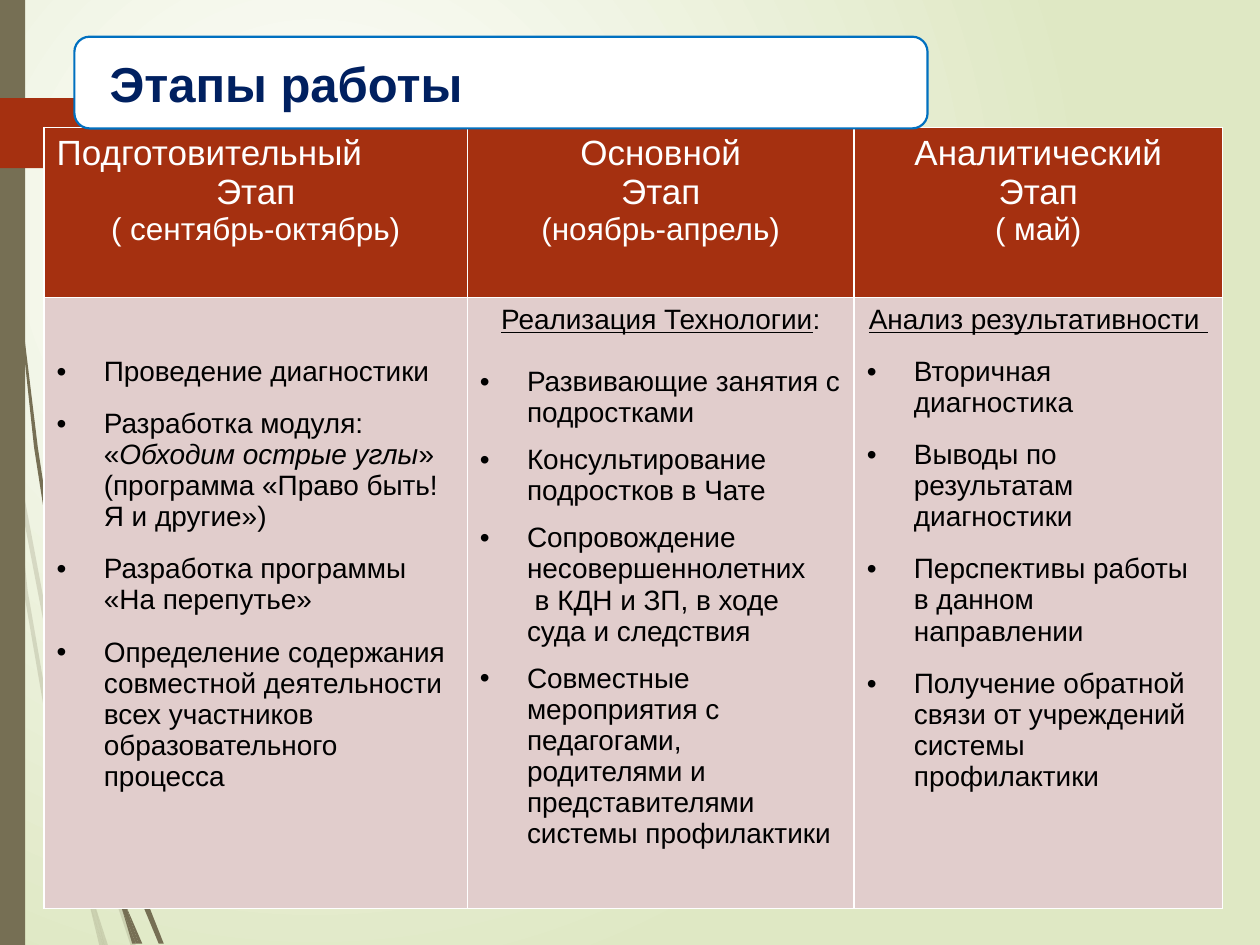
from lxml import etree
from pptx import Presentation
from pptx.dml.color import RGBColor
from pptx.enum.shapes import MSO_SHAPE
from pptx.enum.text import MSO_ANCHOR, MSO_AUTO_SIZE, PP_ALIGN
from pptx.oxml.ns import qn
from pptx.util import Cm, Pt

LEFT, CENTER = PP_ALIGN.LEFT, PP_ALIGN.CENTER
FONT = "Arial"
WHITE, BLACK, RUST, OLIVE, ROSE = "FFFFFF", "000000", "A53010", "766F54", "E1CDCC"

TITLE = "Этапы работы"
STAGES = [
    {"head": ["Подготовительный", "Этап", "( сентябрь-октябрь)"], "first_align": LEFT,
     "goal": [], "top": 1.18, "first_gap": 0, "gap": 12,
     "tasks": [
         ["Проведение диагностики"],
         ["Разработка модуля: «", ("Обходим острые углы", {"italic": True}),
          "» (программа «Право быть! Я и другие»)"],
         ["Разработка программы «На перепутье»"],
         ["Определение содержания совместной деятельности всех участников "
          "образовательного процесса"]]},
    {"head": ["Основной", "Этап", "(ноябрь-апрель)"], "first_align": CENTER,
     "goal": [("Реализация Технологии", {"underline": True}), ":"],
     "top": 0.13, "first_gap": 18, "gap": 9,
     "tasks": [
         ["Развивающие занятия с подростками"],
         ["Консультирование подростков в Чате"],
         ["Сопровождение несовершеннолетних\n в КДН и ЗП, в ходе суда и следствия"],
         ["Совместные мероприятия с педагогами, родителями и представителями "
          "системы профилактики"]]},
    {"head": ["Аналитический", "Этап", "( май)"], "first_align": CENTER,
     "goal": [("Анализ результативности ", {"underline": True})],
     "top": 0.13, "first_gap": 12, "gap": 12,
     "tasks": [
         ["Вторичная диагностика"],
         ["Выводы по результатам диагностики"],
         ["Перспективы работы в данном направлении"],
         ["Получение обратной связи от учреждений системы профилактики"]]},
]
HEAD_SIZES = [20, 20, 18]
COLUMN_WIDTHS = [8.53, 7.8, 7.42]
ROW_HEIGHTS = [3.43, 12.31]

# Outlines of the grass blades, in units of BLADE_UNIT
BLADE_UNIT = Cm(0.0254)
PALE_BLADES = [
    [(8, 350), (6, 322), (0, 282), (0, 299), (7, 344)],
    [(40, 522), (59, 599), (59, 586), (43, 520), (10, 345), (12, 376)],
    [(64, 607), (61, 596), (61, 610), (85, 694), (104, 751), (108, 751), (88, 692)],
    [(83, 751), (86, 751), (73, 711)],
    [(64, 683), (48, 619), (22, 469), (12, 376), (8, 350), (19, 470), (45, 621),
     (64, 693), (70, 714), (69, 707)],
    [(58, 599), (60, 646), (64, 683), (67, 692), (73, 711), (72, 706), (63, 646),
     (61, 610), (61, 608)],
    [(61, 584), (76, 462), (111, 349), (159, 245), (187, 198), (201, 175), (217, 154),
     (217, 153), (201, 175), (186, 197), (158, 244), (110, 348), (75, 461), (59, 584),
     (59, 586), (61, 596)],
    [(70, 714), (79, 751), (82, 751)],
    [(61, 608), (61, 610), (61, 596), (59, 586), (58, 599)],
    [(67, 692), (65, 683), (69, 707), (70, 714), (82, 751), (83, 751), (73, 711)],
]
DARK_BLADES = [
    [(5, 110), (14, 233), (27, 355), (46, 477), (47, 481), (45, 457), (45, 453),
     (30, 355), (15, 232), (6, 109), (4, 48), (3, 0), (2, 0), (3, 48)],
    [(73, 592), (88, 645), (88, 633), (88, 631), (77, 590), (50, 472), (53, 505)],
    [(94, 649), (91, 641), (91, 656), (109, 708), (126, 749), (130, 749), (113, 706)],
    [(91, 691), (81, 657), (60, 556), (53, 505), (47, 477), (56, 557), (77, 659),
     (92, 708), (97, 722), (96, 717)],
    [(50, 472), (48, 453), (44, 349), (48, 245), (52, 193), (58, 141), (51, 193),
     (47, 245), (43, 349), (45, 449), (49, 472)],
    [(110, 749), (113, 749), (100, 719)],
    [(47, 477), (53, 505), (50, 472), (49, 472), (45, 449), (45, 453)],
    [(91, 633), (103, 552), (131, 476), (169, 406), (191, 374), (203, 359), (216, 344),
     (215, 344), (203, 358), (191, 373), (168, 405), (129, 474), (101, 551), (88, 631),
     (91, 641)],
    [(97, 722), (105, 749), (108, 749)],
    [(88, 645), (91, 691), (96, 706), (100, 719), (100, 716), (91, 656), (90, 651)],
    [(88, 645), (90, 651), (91, 656), (91, 641), (88, 631), (88, 633)],
    [(96, 706), (91, 691), (96, 717), (97, 722), (108, 749), (110, 749), (100, 719)],
]


def rgb(color):
    return RGBColor.from_string(color)


def paint(shape, fill, line=None):
    shape.shadow.inherit = False
    shape.fill.solid()
    shape.fill.fore_color.rgb = rgb(fill)
    if line:
        shape.line.color.rgb = rgb(line)
        shape.line.width = Pt(1.25)
    else:
        shape.line.fill.background()


def paint_background(slide):
    fill = slide.background.fill
    fill.gradient()
    for stop, color in zip(fill.gradient_stops, (WHITE, "DFE8C4")):
        stop.color.rgb = rgb(color)
    gradient = slide.element.find(".//" + qn("a:gradFill"))
    gradient.remove(gradient.find(qn("a:lin")))
    circle = etree.SubElement(gradient, qn("a:path"), path="circle")
    etree.SubElement(circle, qn("a:fillToRect"), l="50000", t="50000", r="100000", b="100000")


def add_blade(shapes, points, alpha):
    builder = shapes.build_freeform(*points[0], scale=1 / (1 / BLADE_UNIT))
    builder.add_line_segments(points[1:], close=True)
    blade = builder.convert_to_shape()
    paint(blade, OLIVE)
    if alpha < 100:
        color = blade.element.spPr.find(".//" + qn("a:srgbClr"))
        etree.SubElement(color, qn("a:alpha"), val=str(alpha * 1000))


def write(paragraph, pieces, size, color, align=LEFT):
    """Fill a paragraph with strings or (string, font values) pairs."""
    paragraph.alignment = align
    for piece in pieces:
        words, style = (piece, {}) if isinstance(piece, str) else piece
        for number, line in enumerate(words.split("\n")):
            if number:
                paragraph.add_line_break()
            run = paragraph.add_run()
            run.text = line
            run.font.color.rgb = rgb(color)
            for key, value in {"name": FONT, "size": Pt(size), **style}.items():
                setattr(run.font, key, value)


def add_bullet(paragraph):
    properties = paragraph._p.get_or_add_pPr()
    properties.set("marL", str(Cm(0.95)))
    properties.set("indent", str(-Cm(0.95)))
    etree.SubElement(properties, qn("a:buFont"), typeface=FONT)
    etree.SubElement(properties, qn("a:buChar"), char="•")


def format_cell(cell, fill):
    properties = cell._tc.get_or_add_tcPr()
    for side in ("lnL", "lnR", "lnT", "lnB"):
        border = etree.SubElement(properties, qn("a:" + side), w=str(Pt(1)))
        solid = etree.SubElement(border, qn("a:solidFill"))
        etree.SubElement(solid, qn("a:srgbClr"), val=WHITE)
    cell.fill.solid()
    cell.fill.fore_color.rgb = rgb(fill)


def next_paragraph(frame):
    first = frame.paragraphs[0]
    return frame.add_paragraph() if first.runs else first


def add_stages(shapes):
    table = shapes.add_table(2, len(STAGES), Cm(0.89), Cm(2.57),
                             Cm(sum(COLUMN_WIDTHS)), Cm(sum(ROW_HEIGHTS))).table
    for row, height in zip(table.rows, ROW_HEIGHTS):
        row.height = Cm(height)
    for index, (stage, width) in enumerate(zip(STAGES, COLUMN_WIDTHS)):
        table.columns[index].width = Cm(width)
        head, body = table.cell(0, index), table.cell(1, index)
        format_cell(head, RUST)
        format_cell(body, ROSE)
        body.margin_top = Cm(stage["top"])
        aligns = [stage["first_align"], CENTER, CENTER]
        for line, size, align in zip(stage["head"], HEAD_SIZES, aligns):
            write(next_paragraph(head.text_frame), [line], size, WHITE, align)
        if stage["goal"]:
            write(next_paragraph(body.text_frame), stage["goal"], 16, BLACK, CENTER)
        for number, task in enumerate(stage["tasks"]):
            paragraph = next_paragraph(body.text_frame)
            paragraph.space_before = Pt(stage["gap"] if number else stage["first_gap"])
            add_bullet(paragraph)
            write(paragraph, task, 16, BLACK)


def add_title(slide):
    plate = slide.shapes.add_shape(MSO_SHAPE.ROUNDED_RECTANGLE,
                                   Cm(1.5), Cm(0.74), Cm(17.2), Cm(1.85))
    paint(plate, WHITE, "0070C0")
    title = slide.shapes.title
    title.left, title.top, title.width, title.height = Cm(1.57), Cm(0.91), Cm(17.12), Cm(1.68)
    frame_format = {"vertical_anchor": MSO_ANCHOR.MIDDLE, "auto_size": MSO_AUTO_SIZE.NONE,
                    "word_wrap": True, "margin_left": Cm(0.64), "margin_right": Cm(0.64),
                    "margin_top": 0, "margin_bottom": 0}
    for key, value in frame_format.items():
        setattr(title.text_frame, key, value)
    heading = title.text_frame.paragraphs[0]
    heading.line_spacing = 0.9
    write(heading, [(TITLE, {"bold": True})], 28, "002060")
    title.element.getparent().append(title.element)  # in front of the plate


def main():
    deck = Presentation()
    deck.slide_width, deck.slide_height = Cm(25.4), Cm(19.05)
    slide = deck.slides.add_slide(deck.slide_layouts[5])
    paint_background(slide)
    for blades, alpha in ((PALE_BLADES, 20), (DARK_BLADES, 100)):
        for points in blades:
            add_blade(slide.shapes, points, alpha)
    for kind, color, box in ((MSO_SHAPE.RECTANGLE, OLIVE, (0, 0, 0.51, 19.05)),
                             (MSO_SHAPE.PENTAGON, RUST, (0, 1.98, 3.8, 1.41))):
        paint(slide.shapes.add_shape(kind, *map(Cm, box)), color)
    add_stages(slide.shapes)
    add_title(slide)
    deck.save("out.pptx")


if __name__ == "__main__":
    main()
